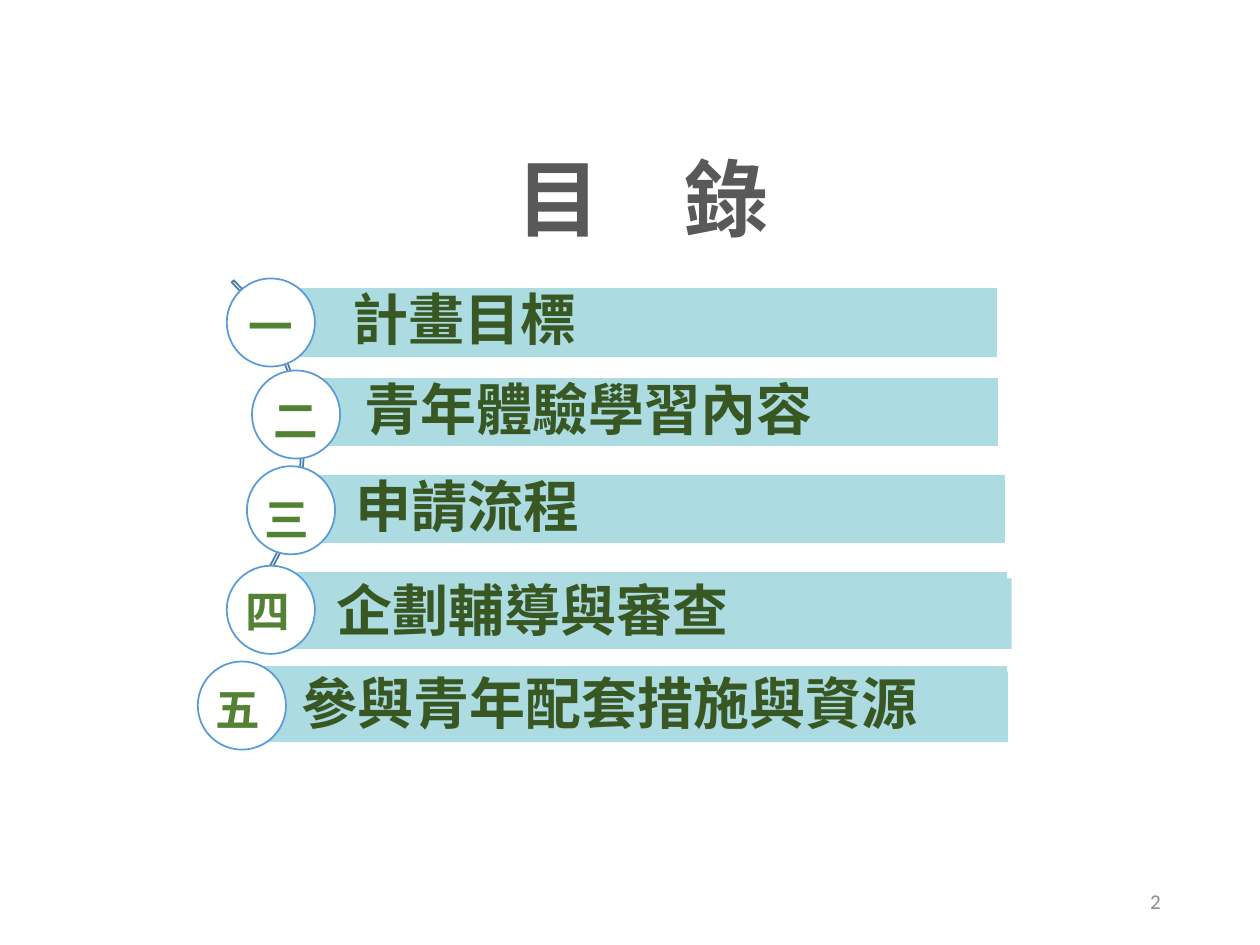
"""Build the contents slide: five numbered topics strung along an arc."""
from pptx import Presentation
from pptx.dml.color import RGBColor
from pptx.enum.shapes import MSO_SHAPE
from pptx.enum.text import MSO_ANCHOR, PP_ALIGN
from pptx.util import Inches, Pt

ARC, BAR, DISC = MSO_SHAPE.BLOCK_ARC, MSO_SHAPE.RECTANGLE, MSO_SHAPE.OVAL
MIDDLE = MSO_ANCHOR.MIDDLE
LEFT, CENTER, RIGHT = PP_ALIGN.LEFT, PP_ALIGN.CENTER, PP_ALIGN.RIGHT
CJK = "Noto Sans CJK SC"
TEAL, WHITE, BLUE = "ACDCE2", "FFFFFF", "5B9BD5"

prs = Presentation()
prs.slide_width, prs.slide_height = Inches(10), Inches(7.5)
slide = prs.slides.add_slide(prs.slide_layouts[6])
COL, ROW = prs.slide_width / 100, prs.slide_height / 75


def draw(kind, left, top, width, height, fill=None, line=None):
    box = [round(v) for v in (left * COL, top * ROW, width * COL, height * ROW)]
    if kind is None:
        return slide.shapes.add_textbox(*box)
    shape = slide.shapes.add_shape(kind, *box)
    shape.shadow.inherit = False
    if fill:
        shape.fill.solid()
        shape.fill.fore_color.rgb = RGBColor.from_string(fill)
    else:
        shape.fill.background()
    if line:
        shape.line.color.rgb = RGBColor.from_string(line)
        shape.line.width = Pt(1)
    else:
        shape.line.fill.background()
    return shape


def write(shape, text, size, color, font=CJK, bold=True, align=LEFT, spacing=0.9,
          left=1, pad=0.5):
    frame = shape.text_frame
    frame.word_wrap = True
    frame.vertical_anchor = MIDDLE
    frame.margin_left, frame.margin_right = round(left * COL), round(pad * COL)
    frame.margin_top = frame.margin_bottom = round(pad * ROW)
    paragraph = frame.paragraphs[0]
    paragraph.text = text
    paragraph.alignment = align
    paragraph.line_spacing = spacing
    paragraph.font.name = font
    paragraph.font.size = Pt(size)
    paragraph.font.bold = bold
    paragraph.font.color.rgb = RGBColor.from_string(color)
    for run in paragraph.runs:
        fonts = run._r.get_or_add_rPr()
        fonts.set("lang", "zh-TW")


title = draw(None, 7.9, 10.7, 86.2, 10.9)
write(title, "目　錄", 48, "595959", align=CENTER, pad=1)

thread = draw(ARC, -13.8, 16.7, 37.9, 37.9, line="497CAB")
for index, value in enumerate((189, 27, 0.006)):
    thread.adjustments[index] = value

for left, top, width in ((21.9, 45.3, 58.1), (19.4, 52.8, 60.6)):
    draw(BAR, left, top, width, 5.6, TEAL, WHITE)

topics = [
    ("一", "計畫目標", (21.3, 22.8, 57.9), WHITE, 6.7, (18, 22.1), (19.2, 22.6)),
    ("二", "青年體驗學習內容", (24.4, 29.9, 54.9), WHITE, 4.5, (20, 29.4), (21.2, 30.1)),
    ("三", "申請流程", (23.7, 37.6, 56.1), WHITE, 4.5, (19.6, 37), (20.5, 37.9)),
    ("四", "企劃輔導與審查", (22.2, 45.9, 58.1), None, 4.5, (18, 44.9), (19, 45.2)),
    ("五", "參與青年配套措施與資源", (19.4, 53.3, 60.6), None, 4.5, (15.7, 52.5), (16.6, 53)),
]
for numeral, topic, bar, edge, indent, disc, label in topics:
    write(draw(BAR, *bar, 5.6, TEAL, edge), topic, 32, "385723", left=indent, pad=0.8)
    draw(DISC, *disc, 7, 7, WHITE, BLUE)
    write(draw(None, *label, 5, 7), numeral, 25.5, "548235", left=0.5)

page = draw(None, 70.6, 69.5, 22.5, 4)
write(page, "2", 12, "8C8C8C", font="Calibri", bold=False, align=RIGHT, spacing=1, pad=1)

prs.save("out.pptx")
